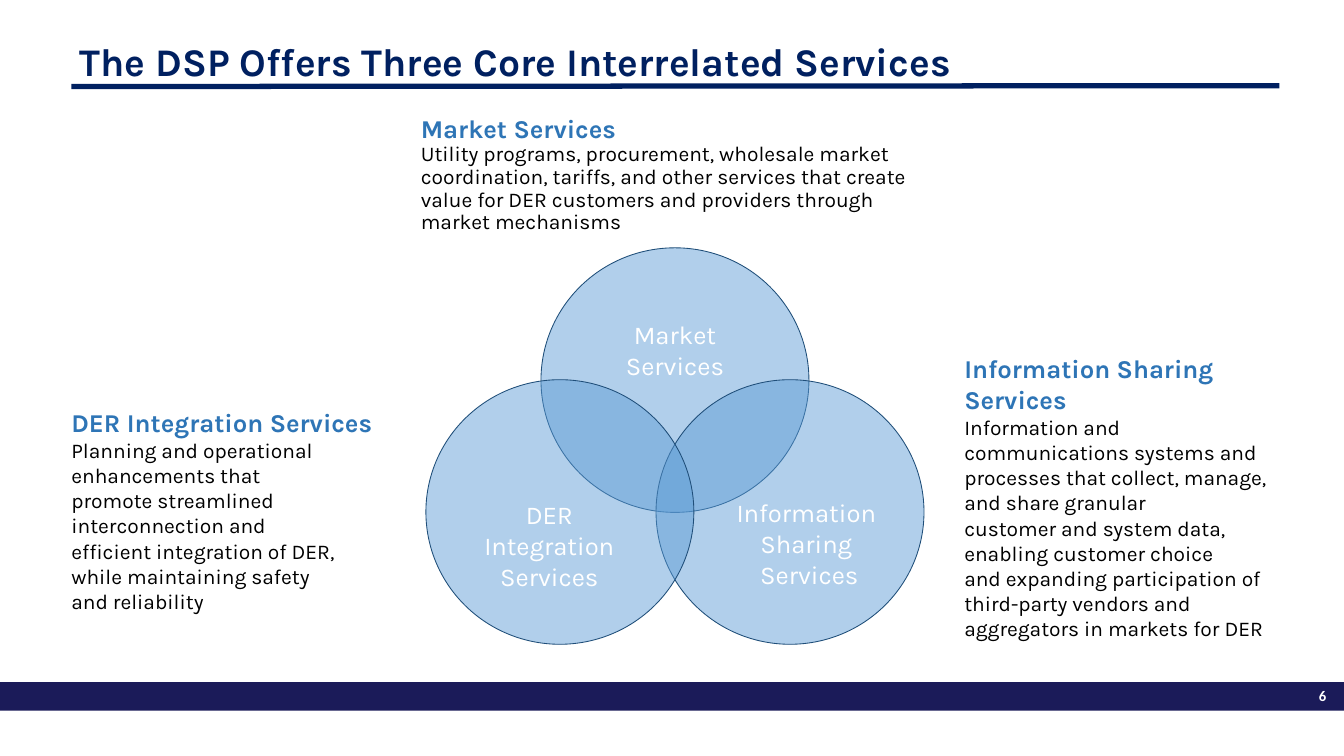
from lxml.etree import SubElement
from pptx import Presentation
from pptx.dml.color import RGBColor
from pptx.enum.shapes import MSO_CONNECTOR, MSO_SHAPE
from pptx.enum.text import MSO_ANCHOR, MSO_AUTO_SIZE, PP_ALIGN
from pptx.oxml.ns import qn
from pptx.util import Inches, Pt

WIDE, HIGH = Inches(16), Inches(9)
COL, ROW = WIDE // 160, HIGH // 90  # grid of 160 columns by 90 rows

NAVY = RGBColor(0x00, 0x20, 0x60)
BAR = RGBColor(0x1B, 0x1B, 0x59)
HEAD = RGBColor(0x2E, 0x75, 0xB6)
SKY = RGBColor(0x5B, 0x9B, 0xD5)
RIM = RGBColor(0x1F, 0x4E, 0x79)
BLACK = RGBColor(0, 0, 0)
WHITE = RGBColor(255, 255, 255)

LEFT, RIGHT = 8.5, 152.3
DISC_W, DISC_H = 31.9, 31.5
MID, STEP = 64.4, 13.7  # left of the top disc, shift of the lower two
HIGH_ROW, LOW_ROW = 29.5, 45.2

MARKET = ("Utility programs, procurement, wholesale market coordination, tariffs, "
          "and other services that create value for DER customers and providers "
          "through market mechanisms")
# "~" marks a space that must not break
DER = ("Planning and~operational enhancements that promote~streamlined "
       "interconnection and efficient~integration of DER, while maintaining "
       "safety and~reliability")
INFO = ("Information~and communications systems and processes that~collect, "
        "manage, and share granular customer~and system data, enabling customer "
        "choice and~expanding participation of third-party vendors~and "
        "aggregators in markets for DER")


def grid(x, y, w, h):
    return [round(n) for n in (x * COL, y * ROW, w * COL, h * ROW)]


def place(shape, *cells):
    shape.left, shape.top, shape.width, shape.height = grid(*cells)


def write(para, text, size=22, color=WHITE, bold=False, font="Karla"):
    run = para.add_run()
    run.text = text.replace("~", chr(160))
    run.font.size, run.font.bold, run.font.name = Pt(size), bold, font
    run.font.color.rgb = color


def frame(shape, inset=None):
    text = shape.text_frame
    text.word_wrap = True
    text.auto_size = MSO_AUTO_SIZE.NONE
    if inset is not None:
        text.margin_left = text.margin_right = inset
        text.margin_top = text.margin_bottom = inset
    return text


def add_box(slide, *cells, inset=None):
    return frame(slide.shapes.add_textbox(*grid(*cells)), inset)


def add_label(slide, lines, *cells):
    text = add_box(slide, *cells)
    for i, line in enumerate(lines):
        para = text.add_paragraph() if i else text.paragraphs[0]
        para.alignment = PP_ALIGN.CENTER
        write(para, line)


def describe(para, head, body):
    """Write a bold heading and its plain text below it."""
    write(para, head, color=HEAD, bold=True)
    para.add_line_break()
    write(para, body, size=18, color=BLACK)


def add_shape(slide, kind, fill, *cells):
    shape = slide.shapes.add_shape(kind, *grid(*cells))
    shape.shadow.inherit = False
    shape.fill.solid()
    shape.fill.fore_color.rgb = fill
    shape.line.fill.background()
    return shape


def add_disc(slide, x, y):
    disc = add_shape(slide, MSO_SHAPE.OVAL, SKY, x, y, DISC_W, DISC_H)
    disc.line.color.rgb = RIM
    disc.line.width = Pt(0.75)
    tint = disc.fill._xPr.find(".//" + qn("a:srgbClr"))
    SubElement(tint, qn("a:alpha"), val="47000")


def add_rule(slide):
    x, y, w, h = grid(LEFT, 10.3, RIGHT - LEFT, -0.1)
    rule = slide.shapes.add_connector(MSO_CONNECTOR.STRAIGHT, x, y, x + w, y + h)
    rule.line.color.rgb = NAVY
    rule.line.width = Pt(4.5)
    SubElement(rule._element.spPr, qn("a:effectLst"))


def add_footer(slide):
    add_shape(slide, MSO_SHAPE.RECTANGLE, BAR, 0, 81.2, 160, 3.4)
    para = add_box(slide, RIGHT, 81.3, 6.6, 3.1).paragraphs[0]
    para.alignment = PP_ALIGN.RIGHT
    write(para, "6", size=12.6, bold=True, font="Calibri")


def fill_title(slide):
    title = slide.shapes.title
    place(title, LEFT, 4.8, RIGHT - LEFT, 5.7)
    text = frame(title)
    text.vertical_anchor = MSO_ANCHOR.MIDDLE
    para = text.paragraphs[0]
    para.alignment, para.line_spacing = PP_ALIGN.LEFT, 0.9
    write(para, "The DSP Offers Three Core Interrelated Services",
          size=33.5, color=NAVY, bold=True)


def fill_body(slide):
    body = slide.placeholders[1]
    place(body, 49.1, 13.3, 62.5, 7.1)
    para = frame(body).paragraphs[0]
    props = para._p.get_or_add_pPr()
    props.set("marL", "0")
    props.set("indent", "0")
    SubElement(props, qn("a:buNone"))
    para.line_spacing, para.space_before = 0.9, Pt(0)
    describe(para, "Market Services", MARKET)


def main():
    deck = Presentation()
    deck.slide_width, deck.slide_height = WIDE, HIGH
    slide = deck.slides.add_slide(deck.slide_layouts[1])
    add_footer(slide)
    add_rule(slide)
    fill_title(slide)
    fill_body(slide)
    for x, y in ((MID, HIGH_ROW), (MID + STEP, LOW_ROW), (MID - STEP, LOW_ROW)):
        add_disc(slide, x, y)
    add_label(slide, ("DER ", "Integration ", "Services "), 55.9, 58.9, 19.7, 12.1)
    add_label(slide, ("Market", "Services"), 72.5, 37.5, 15.7, 8.4)
    add_label(slide, ("Information~", "Sharing~", "Services"), 86, 58.7, 20.7, 12.1)
    for head, body, x, y, h in (
            ("DER Integration Services", DER, LEFT, 48.4, 24.9),
            ("Information Sharing Services", INFO, 114.8, 42, 34.7)):
        para = add_box(slide, x, y, 37.4, h, inset=0).paragraphs[0]
        describe(para, head, body)
    deck.save("out.pptx")


if __name__ == "__main__":
    main()
